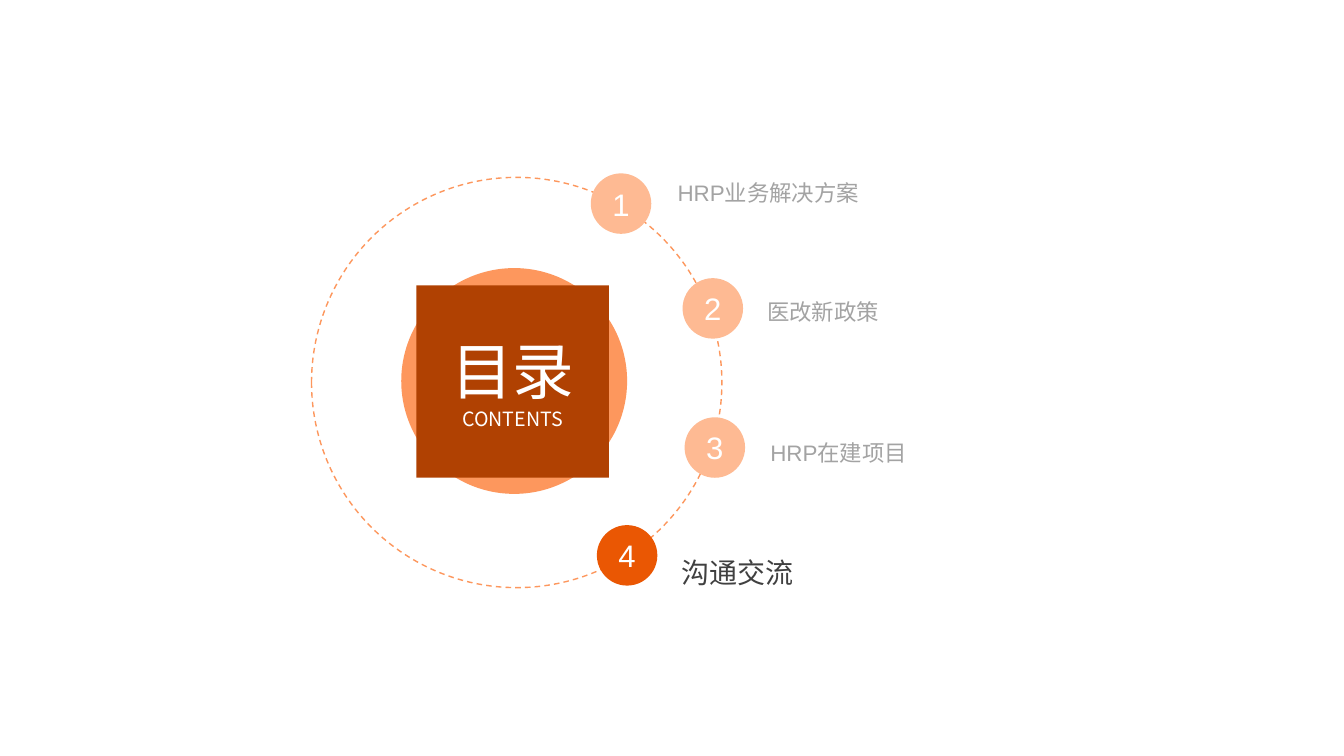
from lxml import etree
from pptx import Presentation
from pptx.dml.color import RGBColor
from pptx.enum.dml import MSO_LINE
from pptx.enum.shapes import MSO_SHAPE
from pptx.enum.text import MSO_ANCHOR, MSO_AUTO_SIZE, PP_ALIGN
from pptx.oxml.ns import qn
from pptx.util import Inches, Pt

OVAL = MSO_SHAPE.OVAL
DASH = MSO_LINE.DASH
MIDDLE = MSO_ANCHOR.MIDDLE
NO_FIT = MSO_AUTO_SIZE.NONE
CENTER, LEFT = PP_ALIGN.CENTER, PP_ALIGN.LEFT
CJK = "Noto Sans CJK SC"
PALE, GREY = "FEBA93", "A3A3A3"
TITLE_ONLY = 5


def color(value):
    return RGBColor.from_string(value)


def write(para, text, size, font_name, tint, align):
    para.alignment = align
    span = para.add_run()
    span.text = text
    formats = {"size": Pt(size), "name": font_name, "bold": False}
    for name, value in formats.items():
        setattr(span.font, name, value)
    span.font.color.rgb = color(tint)
    latin = span.font._element.find(qn("a:latin"))
    east_asian = etree.Element(qn("a:ea"), typeface=CJK)
    latin.addnext(east_asian)


deck = Presentation()
deck.slide_width = Inches(13.33)
deck.slide_height = Inches(7.5)
page = deck.slides.add_slide(deck.slide_layouts[TITLE_ONLY])
shapes = page.shapes

ring = shapes.add_shape(OVAL, Inches(3.98), Inches(2.66), Inches(2.24), Inches(2.24))
ring.shadow.inherit = False
ring.fill.solid()
ring.fill.fore_color.rgb = color("FD975D")
ring.line.fill.background()

orbit = shapes.add_shape(OVAL, Inches(3.09), Inches(1.76), Inches(4.07), Inches(4.07))
orbit.shadow.inherit = False
orbit.fill.background()
orbit.line.color.rgb = color("FD975D")
orbit.line.width = Pt(1)
orbit.line.dash_style = DASH

title = shapes.title
place = {"left": 4.13, "top": 2.83, "width": 1.91, "height": 1.91}
for name, value in place.items():
    setattr(title, name, Inches(value))
etree.SubElement(title._element.spPr, qn("a:prstGeom"), prst="ellipse")
title.fill.solid()
title.fill.fore_color.rgb = color("B04102")
ring._element.getparent().append(title._element)
frame = title.text_frame
frame_format = {
    "word_wrap": True, "auto_size": NO_FIT, "vertical_anchor": MIDDLE,
    "margin_left": 0, "margin_right": 0, "margin_top": 0, "margin_bottom": 0,
}
for name, value in frame_format.items():
    setattr(frame, name, value)
write(frame.paragraphs[0], "目录", 44, CJK, "FFFFFF", CENTER)
write(frame.add_paragraph(), "CONTENTS", 14, CJK, "FFFFFF", CENTER)

entries = [
    ("HRP业务解决方案", 6.68, 1.46, 3.91, 16, GREY, 5.86, 1.72, PALE),
    ("医改新政策", 7.57, 2.64, 3.26, 16, GREY, 6.77, 2.76, PALE),
    ("HRP在建项目", 7.6, 4.04, 3.3, 16, GREY, 6.79, 4.14, PALE),
    ("沟通交流", 6.72, 5.22, 4.03, 20, "404040", 5.92, 5.21, "EA5703"),
]
for number, entry in enumerate(entries, 1):
    text, left, top, width, size, tint, dot_left, dot_top, dot_fill = entry
    box = shapes.add_textbox(Inches(left), Inches(top), Inches(width), Inches(0.84))
    for name, value in frame_format.items():
        setattr(box.text_frame, name, value)
    box.text_frame.margin_left = Inches(0.04)
    para = box.text_frame.paragraphs[0]
    para.line_spacing = 1.2
    write(para, text, size, "Arial", tint, LEFT)

    dot = shapes.add_shape(OVAL, Inches(dot_left), Inches(dot_top), Inches(0.6), Inches(0.6))
    dot.shadow.inherit = False
    dot.fill.solid()
    dot.fill.fore_color.rgb = color(dot_fill)
    dot.line.fill.background()
    dot.text_frame.vertical_anchor = MIDDLE
    write(dot.text_frame.paragraphs[0], str(number), 22.2, "Arial", "FFFFFF", CENTER)

deck.save("out.pptx")
